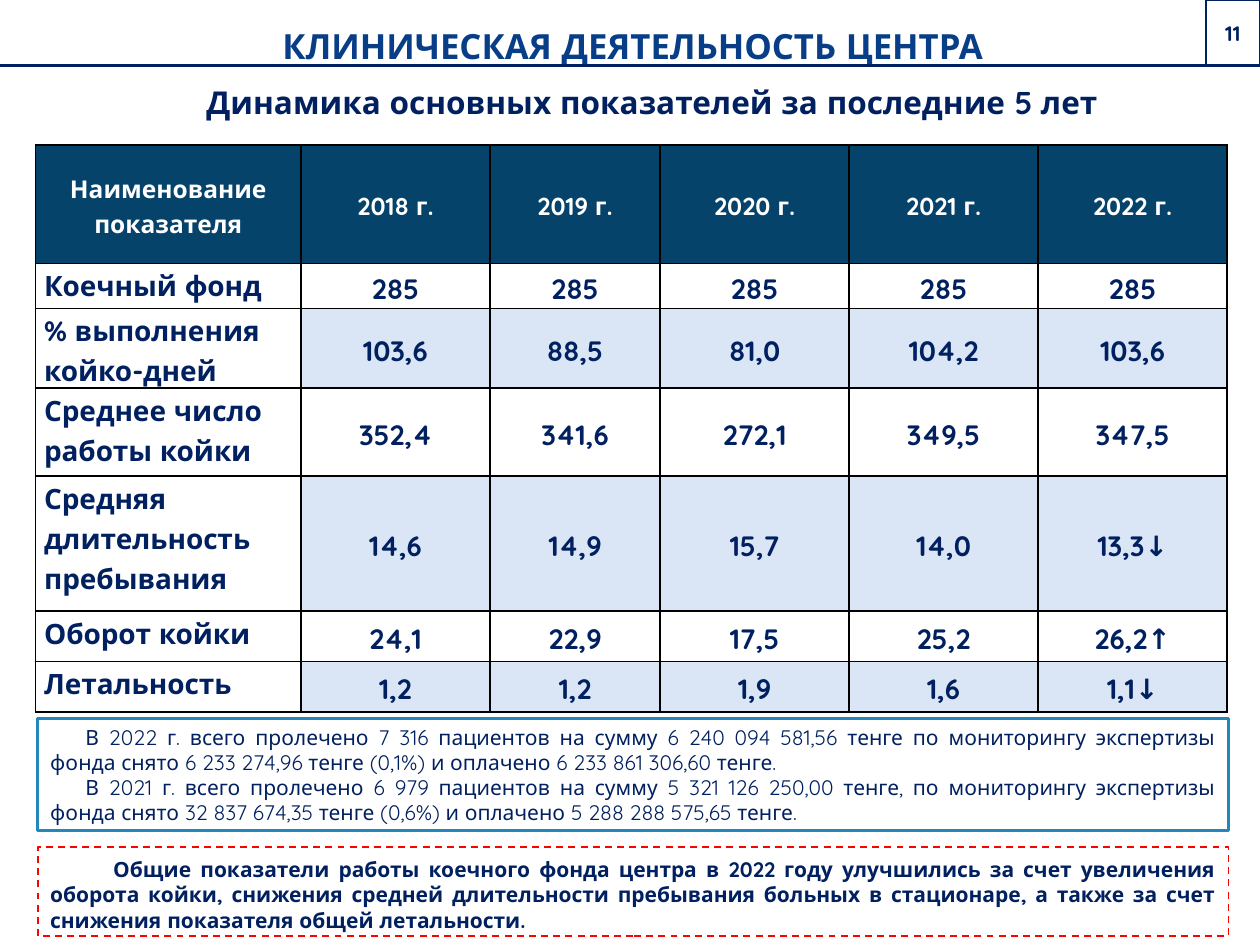
from lxml import etree
from pptx import Presentation
from pptx.dml.color import RGBColor
from pptx.enum.dml import MSO_LINE
from pptx.enum.shapes import MSO_CONNECTOR, MSO_SHAPE
from pptx.enum.text import MSO_ANCHOR, PP_ALIGN
from pptx.oxml.ns import qn
from pptx.util import Inches, Pt

LEFT, CENTER, JUSTIFY = PP_ALIGN.LEFT, PP_ALIGN.CENTER, PP_ALIGN.JUSTIFY
TOP, MIDDLE = MSO_ANCHOR.TOP, MSO_ANCHOR.MIDDLE
RECT, BUTTON = MSO_SHAPE.RECTANGLE, MSO_SHAPE.ACTION_BUTTON_CUSTOM
DASH = MSO_LINE.DASH
FONT = "Quicksand"
NAVY, BLUE, HEADER, BAND = "002060", "073E87", "06436B", "DAE6F6"

YEARS = ["2018 г.", "2019 г.", "2020 г.", "2021 г.", "2022 г."]
ROWS = [
    ["Наименование показателя"] + YEARS,
    ["Коечный фонд", "285", "285", "285", "285", "285"],
    ["% выполнения койко-дней", "103,6", "88,5", "81,0", "104,2", "103,6"],
    ["Среднее число работы койки", "352,4", "341,6", "272,1", "349,5", "347,5"],
    ["Средняя длительность пребывания", "14,6", "14,9", "15,7", "14,0", "13,3↓"],
    ["Оборот койки", "24,1", "22,9", "17,5", "25,2", "26,2↑"],
    ["Летальность", "1,2", "1,2", "1,9", "1,6", "1,1↓"],
]
COL_WIDTHS = [2.11, 1.5, 1.35, 1.5, 1.5, 1.5]
ROW_HEIGHTS = [0.94, 0.36, 0.63, 0.7, 1.07, 0.4, 0.4]

FINANCE = [
    "В 2022 г. всего пролечено 7 316 пациентов на сумму 6 240 094 581,56 тенге "
    "по мониторингу экспертизы фонда снято 6 233 274,96 тенге (0,1%) "
    "и оплачено 6 233 861 306,60 тенге.",
    "В 2021 г. всего пролечено 6 979 пациентов на сумму 5 321 126 250,00 тенге, "
    "по мониторингу экспертизы фонда снято 32 837 674,35 тенге (0,6%) "
    "и оплачено 5 288 288 575,65 тенге.",
]
CONCLUSION = [
    "Общие показатели работы коечного фонда центра в 2022 году улучшились за счет "
    "увеличения оборота койки, снижения средней длительности пребывания больных "
    "в стационаре, а также за счет снижения показателя общей летальности."
]


def rgb(color):
    return RGBColor.from_string(color)


def write(tf, lines, size, color=NAVY, bold=True, align=CENTER, spacing=None, indent=0):
    tf.text = "\n".join(lines)
    tf.word_wrap = True
    for p in tf.paragraphs:
        p.alignment = align
        if spacing:
            p.line_spacing = spacing
        if indent:
            p._p.get_or_add_pPr().set("indent", str(Inches(indent)))
        for r in p.runs:
            r.font.name, r.font.size, r.font.bold = FONT, Pt(size), bold
            r.font.color.rgb = rgb(color)


def add_label(slide, box, text, size, color, align, anchor):
    s = slide.shapes.add_textbox(*map(Inches, box))
    s.text_frame.vertical_anchor = anchor
    write(s.text_frame, [text], size, color, align=align)


def add_frame(slide, box, lines, outline, width, kind=RECT, dash=None,
              anchor=TOP, inset=0.05, **style):
    """Unfilled outlined shape with 12 pt text."""
    s = slide.shapes.add_shape(kind, *map(Inches, box))
    s.shadow.inherit = False
    s.fill.background()
    s.line.color.rgb = rgb(outline)
    s.line.width = Pt(width)
    if dash:
        s.line.dash_style = dash
    tf = s.text_frame
    tf.vertical_anchor = anchor
    tf.margin_top = Inches(inset)
    write(tf, lines, 12, **style)


def add_borders(cell, color="000000", width=1):
    tc_pr = cell._tc.get_or_add_tcPr()
    for i, side in enumerate(("lnL", "lnR", "lnT", "lnB")):
        ln = etree.Element(qn("a:" + side), w=str(Pt(width)))
        fill = etree.SubElement(ln, qn("a:solidFill"))
        etree.SubElement(fill, qn("a:srgbClr"), val=color)
        tc_pr.insert(i, ln)


def format_cell(cell, text, row, col):
    is_header, is_name = row == 0, col == 0
    cell.margin_left = cell.margin_right = Inches(0.07)
    cell.margin_top = cell.margin_bottom = 0
    cell.vertical_anchor = TOP if is_name and not is_header else MIDDLE
    write(cell.text_frame, [text], 14 if is_header else 16,
          "FFFFFF" if is_header else NAVY,
          align=LEFT if is_name and not is_header else CENTER, spacing=1.15)
    if is_header or (row % 2 == 0 and not is_name):
        cell.fill.solid()
        cell.fill.fore_color.rgb = rgb(HEADER if is_header else BAND)
    else:
        cell.fill.background()
    add_borders(cell)


def add_indicators(slide, left, top):
    size = Inches(sum(COL_WIDTHS)), Inches(sum(ROW_HEIGHTS))
    table = slide.shapes.add_table(len(ROWS), len(COL_WIDTHS),
                                   Inches(left), Inches(top), *size).table
    table.first_row = table.horz_banding = False
    for column, width in zip(table.columns, COL_WIDTHS):
        column.width = Inches(width)
    for i, (height, values) in enumerate(zip(ROW_HEIGHTS, ROWS)):
        table.rows[i].height = Inches(height)
        for j, value in enumerate(values):
            format_cell(table.cell(i, j), value, i, j)


def add_header(slide, width, height):
    add_label(slide, (0.44, 0.1, 9.16, height), "КЛИНИЧЕСКАЯ ДЕЯТЕЛЬНОСТЬ ЦЕНТРА",
              19.8, BLUE, CENTER, MIDDLE)
    rule = slide.shapes.add_connector(MSO_CONNECTOR.STRAIGHT, 0, Inches(height),
                                      Inches(width), Inches(height))
    rule.line.color.rgb = rgb(NAVY)
    rule.line.width = Pt(2.25)
    etree.SubElement(rule._element.spPr, qn("a:effectLst"))
    add_frame(slide, (width - 0.43, 0, 0.43, height), ["11"], NAVY, 1,
              kind=BUTTON, anchor=MIDDLE)


def main():
    prs = Presentation()
    prs.slide_width, prs.slide_height = Inches(10), Inches(7.5)
    slide = prs.slides.add_slide(prs.slide_layouts[6])
    add_header(slide, 10, 0.52)
    add_label(slide, (1.54, 0.61, 7.56, 0.4),
              "Динамика основных показателей за последние 5 лет", 18, NAVY, LEFT, TOP)
    add_indicators(slide, 0.28, 1.15)
    add_frame(slide, (0.3, 5.7, 9.45, 0.89), FINANCE, "2487BB", 1.5,
              bold=False, align=JUSTIFY, indent=0.28)
    add_frame(slide, (0.3, 6.72, 9.45, 0.71), CONCLUSION, "FF0000", 1,
              dash=DASH, inset=0.08, align=JUSTIFY, indent=0.5)
    prs.save("out.pptx")


if __name__ == "__main__":
    main()
